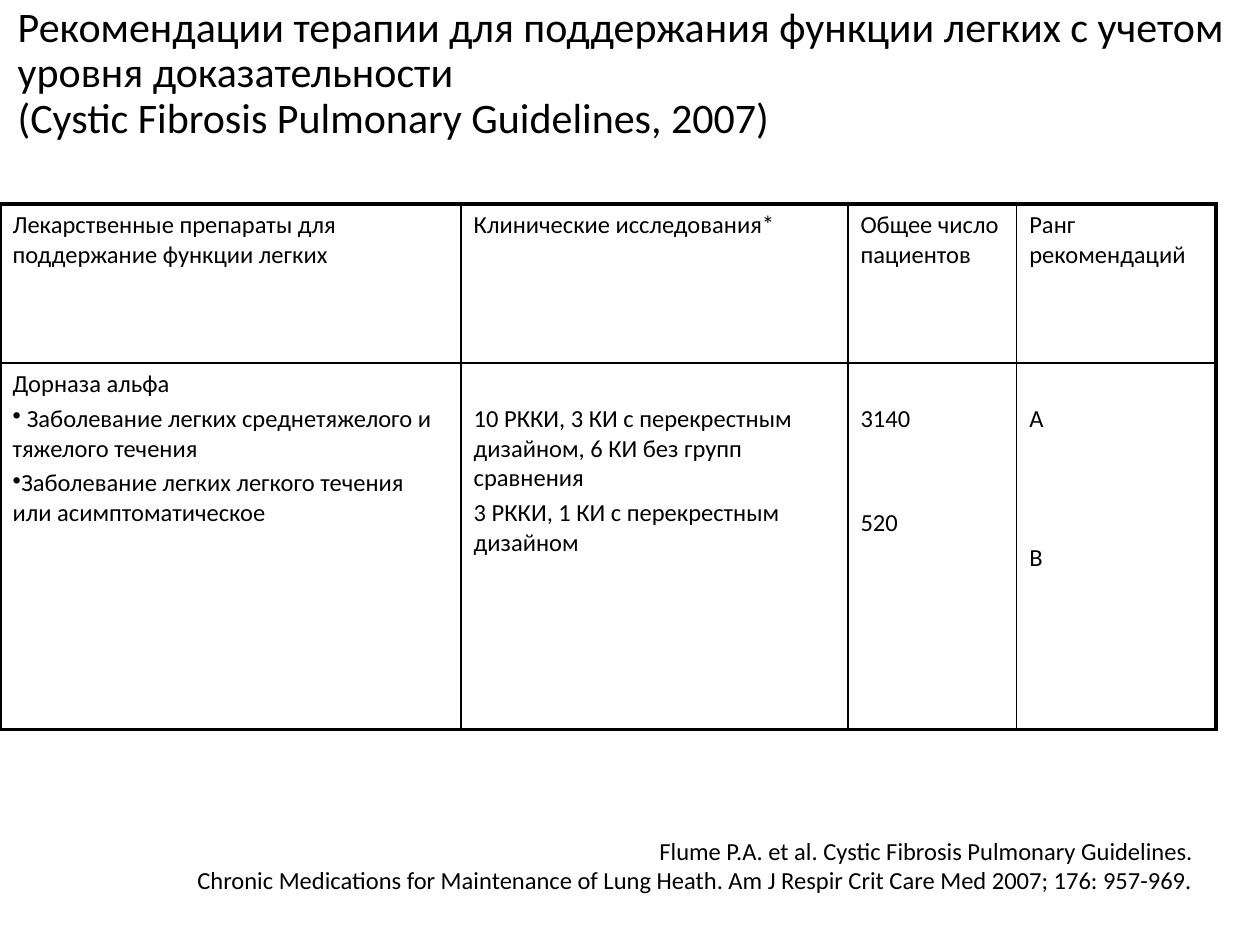
from dataclasses import dataclass

from lxml.etree import SubElement
from pptx import Presentation
from pptx.dml.color import RGBColor
from pptx.enum.shapes import MSO_SHAPE as Shape
from pptx.enum.text import MSO_ANCHOR as Anchor, MSO_AUTO_SIZE as Fit, PP_ALIGN as Align
from pptx.oxml.ns import qn
from pptx.util import Inches, Pt


@dataclass(frozen=True)
class Theme:
    font: str = "Calibri"
    ink: str = "000000"
    paper: str = "FFFFFF"
    title: float = 24
    body: float = 14
    inner: float = 1
    outer: float = 2.25
    gap: float = 2.8
    step: float = 19.9


@dataclass(frozen=True)
class Para:
    text: str
    skip: int = 0
    bullet: bool = False


TITLE = [
    Para("Рекомендации терапии для поддержания функции легких с учетом уровня доказательности"),
    Para("(Cystic Fibrosis Pulmonary Guidelines, 2007)"),
]
ROWS = [
    [
        [Para("Лекарственные препараты для поддержание функции легких")],
        [Para("Клинические исследования*")],
        [Para("Общее число пациентов")],
        [Para("Ранг рекомендаций")],
    ],
    [
        [
            Para("Дорназа альфа"),
            Para(" Заболевание легких среднетяжелого и тяжелого течения", bullet=True),
            Para("Заболевание легких легкого течения или асимптоматическое", bullet=True),
        ],
        [
            Para("10 РККИ, 3 КИ с перекрестным дизайном, 6 КИ без групп сравнения", skip=1),
            Para("3 РККИ, 1 КИ с перекрестным дизайном"),
        ],
        [Para("3140", skip=1), Para("520", skip=2)],
        [Para("А", skip=1), Para("В", skip=3)],
    ],
]
SOURCE = [
    Para("Flume P.A. et al. Cystic Fibrosis Pulmonary Guidelines."),
    Para("Chronic Medications for Maintenance of Lung Heath. "
         "Am J Respir Crit Care Med 2007; 176: 957-969."),
]


class Deck:
    """Holds the theme and the current slide, and adds elements to it."""

    def __init__(self, theme):
        self.theme = theme
        self.prs = Presentation()
        self.prs.slide_width, self.prs.slide_height = Inches(10), Inches(7.5)
        self.s = self.prs.slides.add_slide(self.prs.slide_layouts[5])

    def text(self, tf, paras, size, align=Align.LEFT, line=None, gap=0):
        tf.word_wrap = True
        for i, para in enumerate(paras):
            p = tf.paragraphs[0] if i == 0 else tf.add_paragraph()
            p.alignment, p.line_spacing = align, line
            p.space_before = Pt(gap + para.skip * self.theme.step if i else 0)
            if para.bullet:
                pPr = p._p.get_or_add_pPr()
                pPr.set("marL", "0")
                pPr.set("indent", "0")
                SubElement(pPr, qn("a:buChar"), char="•")
            r = p.add_run()
            r.text = para.text
            r.font.name, r.font.size, r.font.bold = self.theme.font, Pt(size), False
            r.font.color.rgb = RGBColor.from_string(self.theme.ink)

    def title(self, paras, left, top, width, height):
        sp = self.s.shapes.title
        sp.left, sp.top, sp.width, sp.height = map(Inches, (left, top, width, height))
        tf = sp.text_frame
        tf.vertical_anchor, tf.auto_size = Anchor.TOP, Fit.SHAPE_TO_FIT_TEXT
        self.text(tf, paras, self.theme.title, line=0.9)

    def border(self, cell, side, width):
        tcPr = cell._tc.get_or_add_tcPr()
        ln = SubElement(tcPr, qn(f"a:ln{side}"), w=str(Pt(width)))
        SubElement(SubElement(ln, qn("a:solidFill")), qn("a:srgbClr"), val=self.theme.ink)

    def table(self, rows, left, top, widths, heights):
        t = self.theme
        last_row, last_col = len(heights) - 1, len(widths) - 1
        frame = self.s.shapes.add_table(
            len(heights), len(widths), Inches(left), Inches(top),
            Inches(sum(widths)), Inches(sum(heights)))
        tbl = frame.table
        tbl.first_row = tbl.horz_banding = False
        for col, width in zip(tbl.columns, widths):
            col.width = Inches(width)
        for y, height in enumerate(heights):
            tbl.rows[y].height = Inches(height)
            for x, paras in enumerate(rows[y]):
                cell = tbl.cell(y, x)
                edges = {"L": x == 0, "R": x == last_col, "T": y == 0, "B": y == last_row}
                for side, is_outer in edges.items():
                    self.border(cell, side, t.outer if is_outer else t.inner)
                cell.fill.solid()
                cell.fill.fore_color.rgb = RGBColor.from_string(t.paper)
                cell.margin_top = Inches(0.05) + Pt(paras[0].skip * t.step)
                self.text(cell.text_frame, paras, t.body, gap=t.gap)

    def source(self, paras, left, top, width, height):
        sp = self.s.shapes.add_shape(
            Shape.RECTANGLE, *map(Inches, (left, top, width, height)))
        sp.shadow.inherit = False
        sp.fill.solid()
        sp.fill.fore_color.rgb = RGBColor.from_string(self.theme.paper)
        sp.line.fill.background()
        tf = sp.text_frame
        tf.auto_size, tf.margin_right = Fit.SHAPE_TO_FIT_TEXT, Inches(0.18)
        self.text(tf, paras, self.theme.body, Align.RIGHT)


def main():
    deck = Deck(Theme())
    deck.title(TITLE, 0.04, 0, 9.96, 1.19)
    deck.table(ROWS, 0, 1.62, [3.66, 3.07, 1.34, 1.58], [1.26, 2.91])
    deck.source(SOURCE, 0, 6.58, 9.65, 0.57)
    deck.prs.save("out.pptx")


if __name__ == "__main__":
    main()
